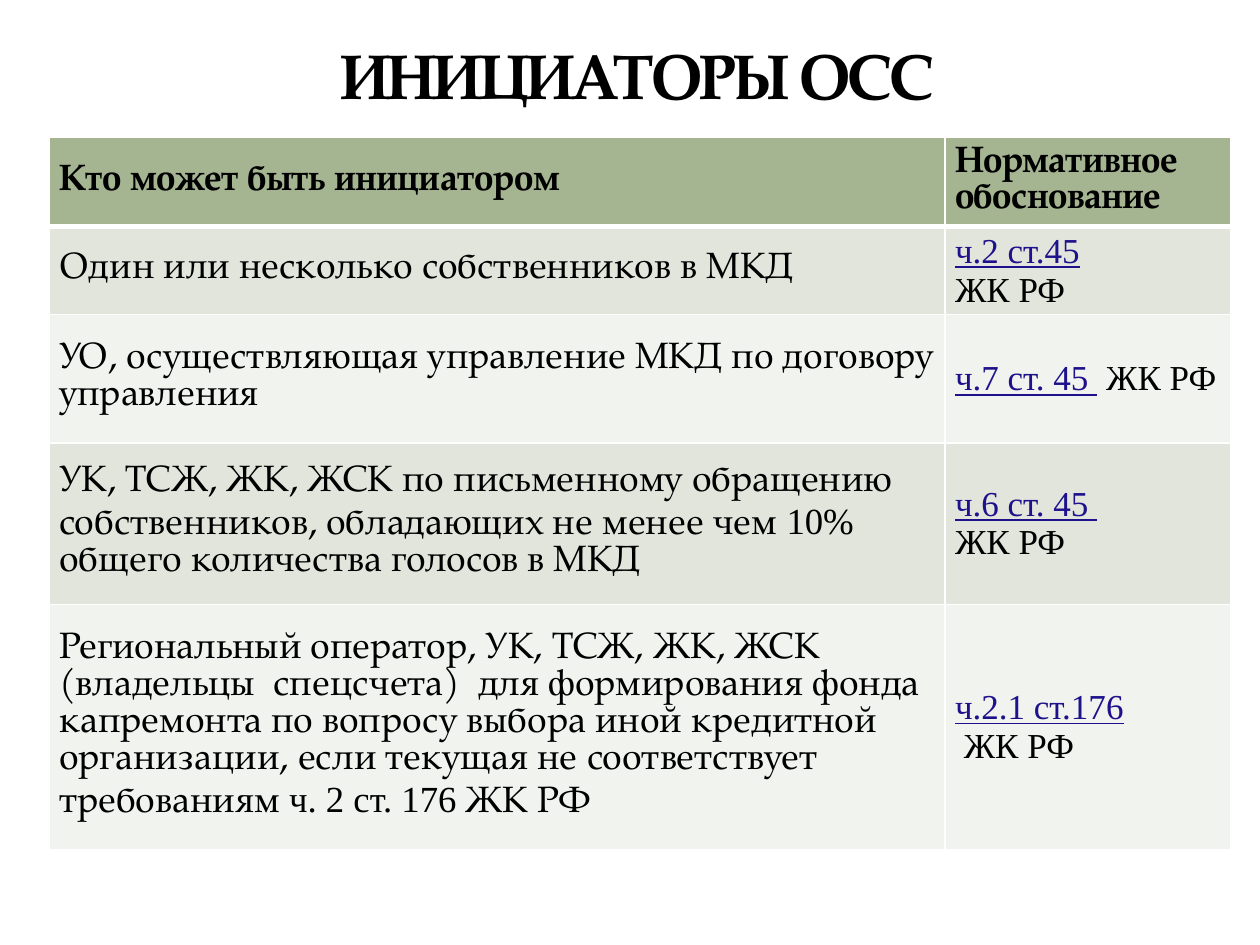
from lxml import etree
from pptx import Presentation
from pptx.dml.color import RGBColor
from pptx.enum.text import MSO_ANCHOR, PP_ALIGN
from pptx.oxml.ns import qn
from pptx.util import Inches, Pt

MIDDLE, BOTTOM = MSO_ANCHOR.MIDDLE, MSO_ANCHOR.BOTTOM
CENTER = PP_ALIGN.CENTER

BLACK = RGBColor(0x00, 0x00, 0x00)
WHITE = RGBColor(0xFF, 0xFF, 0xFF)
REFERENCE = RGBColor(0x1E, 0x12, 0x8C)
HEADER_FILL = RGBColor(0xA5, 0xB5, 0x92)
BAND_FILLS = (RGBColor(0xE1, 0xE5, 0xDC), RGBColor(0xF0, 0xF3, 0xEE))

SERIF = "TeX Gyre Pagella"
TIMES = "Times New Roman"

BODY = dict(face=SERIF, size=21)
BODY_TIMES = dict(face=TIMES, size=21)
HEADING = dict(face=SERIF, size=21, bold=True)
LAW = dict(face=TIMES, size=20, color=REFERENCE, underline=True)
CODE = dict(face=TIMES, size=20)
CODE_GAP = dict(face=TIMES, size=20, bold=True)
LAW_GAP = dict(LAW, bold=True)

COLUMN_WIDTHS = (7.11, 2.27)
ROW_HEIGHTS = (0.71, 0.64, 1.02, 1.28, 1.95)

# Each cell is a list of paragraphs, each paragraph a list of (text, style) runs.
INITIATORS = [
    ([[("Кто может быть инициатором", HEADING)]],
     [[("Нормативное обоснование", HEADING)]]),
    ([[("Один или несколько собственников в МКД", BODY)]],
     [[("ч.2 ст.45", LAW)], [("ЖК РФ", CODE)]]),
    ([[("УО, осуществляющая управление МКД по договору управления", BODY)]],
     [[("ч.7 ст. 45 ", LAW), (" ", CODE_GAP), ("ЖК РФ", CODE)]]),
    ([[("УК, ТСЖ, ЖК, ЖСК по письменному обращению собственников, "
        "обладающих не менее чем ", BODY),
       ("10%", BODY_TIMES),
       (" общего количества голосов в МКД", BODY)]],
     [[("ч.6 ст. 45", LAW), (" ", LAW_GAP)], [("ЖК РФ", CODE)]]),
    ([[("Региональный оператор, УК, ТСЖ, ЖК, ЖСК (владельцы  спецсчета)  для "
        "формирования фонда капремонта по вопросу выбора иной кредитной "
        "организации, если текущая не соответствует требованиям ", BODY),
       ("ч. 2 ст. 176 ", BODY_TIMES),
       ("ЖК РФ", BODY)]],
     [[("ч.2.1 ст.176", LAW)], [(" ", CODE_GAP), ("ЖК РФ", CODE)]]),
]


class SlideBuilder:
    def __init__(self, slide):
        self.slide = slide

    def add_run(self, paragraph, text, face, size, color=BLACK, bold=False,
                underline=False):
        run = paragraph.add_run()
        run.text = text
        font = run.font
        font.name, font.size = face, Pt(size)
        font.bold, font.underline = bold, underline
        font.color.rgb = color
        return run

    def title(self, text, left, top, width, height):
        heading = self.slide.shapes.title
        heading.left, heading.top = Inches(left), Inches(top)
        heading.width, heading.height = Inches(width), Inches(height)
        frame = heading.text_frame
        frame.vertical_anchor = BOTTOM
        paragraph = frame.paragraphs[0]
        paragraph.alignment = CENTER
        run = self.add_run(paragraph, text, SERIF, 36, bold=True)
        run.font._element.set("spc", "-100")

    def borders(self, cell, **widths):
        """Draw white borders; widths are points keyed by side L, R, T, B."""
        properties = cell._tc.get_or_add_tcPr()
        for side, width in widths.items():
            line = etree.SubElement(properties, qn(f"a:ln{side}"), w=str(Pt(width)))
            fill = etree.SubElement(line, qn("a:solidFill"))
            etree.SubElement(fill, qn("a:srgbClr"), val=str(WHITE))

    def cell(self, cell, paragraphs, fill, top_border, bottom_border):
        self.borders(cell, L=1, R=1, T=top_border, B=bottom_border)
        cell.fill.solid()
        cell.fill.fore_color.rgb = fill
        cell.vertical_anchor = MIDDLE
        cell.margin_left = cell.margin_right = Inches(0.08)
        cell.margin_top = cell.margin_bottom = Inches(0.04)
        frame = cell.text_frame
        for index, runs in enumerate(paragraphs):
            paragraph = frame.add_paragraph() if index else frame.paragraphs[0]
            for text, style in runs:
                self.add_run(paragraph, text, **style)

    def table(self, rows, left, top, widths, heights):
        table = self.slide.shapes.add_table(
            len(rows), len(widths), Inches(left), Inches(top),
            Inches(sum(widths)), Inches(sum(heights))).table
        for column, width in zip(table.columns, widths):
            column.width = Inches(width)
        for index, (row, height) in enumerate(zip(rows, heights)):
            table.rows[index].height = Inches(height)
            fill = BAND_FILLS[(index - 1) % 2] if index else HEADER_FILL
            for column, paragraphs in enumerate(row):
                self.cell(table.cell(index, column), paragraphs, fill,
                          top_border=3 if index == 1 else 1,
                          bottom_border=3 if index == 0 else 1)


def main():
    presentation = Presentation()
    presentation.slide_width, presentation.slide_height = Inches(10), Inches(7.5)
    title_only = presentation.slide_layouts[5]
    builder = SlideBuilder(presentation.slides.add_slide(title_only))
    builder.table(INITIATORS, 0.39, 1.09, COLUMN_WIDTHS, ROW_HEIGHTS)
    builder.title("ИНИЦИАТОРЫ ОСС", 0.55, 0.16, 9, 0.78)
    presentation.save("out.pptx")


if __name__ == "__main__":
    main()
